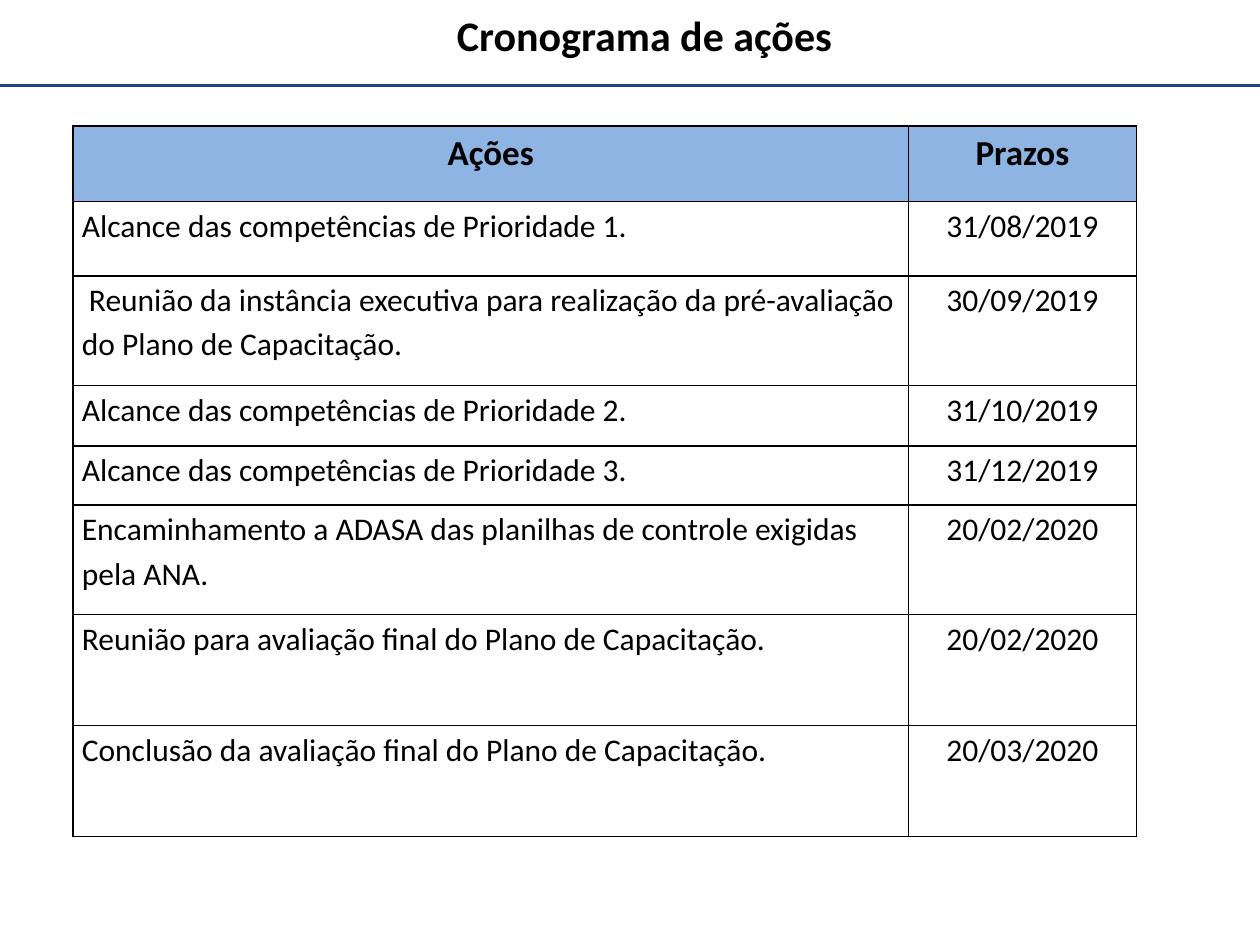
from dataclasses import dataclass

from lxml import etree
from pptx import Presentation
from pptx.dml.color import RGBColor
from pptx.enum.shapes import MSO_CONNECTOR
from pptx.enum.text import MSO_ANCHOR, PP_ALIGN
from pptx.oxml.ns import qn
from pptx.util import Inches, Pt

LEFT, CENTER = PP_ALIGN.LEFT, PP_ALIGN.CENTER
MIDDLE = MSO_ANCHOR.MIDDLE
STRAIGHT = MSO_CONNECTOR.STRAIGHT

# Content
TITLE = "Cronograma de ações"
HEADER = ("Ações", "Prazos")
ACTIONS = [
    ("Alcance das competências de Prioridade 1.", "31/08/2019"),
    (" Reunião da instância executiva para realização da pré-avaliação "
     "do Plano de Capacitação.", "30/09/2019"),
    ("Alcance das competências de Prioridade 2.", "31/10/2019"),
    ("Alcance das competências de Prioridade 3.", "31/12/2019"),
    ("Encaminhamento a ADASA das planilhas de controle exigidas pela ANA.",
     "20/02/2020"),
    ("Reunião para avaliação final do Plano de Capacitação.", "20/02/2020"),
    ("Conclusão da avaliação final do Plano de Capacitação.", "20/03/2020"),
]


@dataclass(frozen=True)
class Theme:
    font: str = "Calibri"
    ink: str = "000000"
    rule: str = "1C477D"
    header: str = "8EB4E3"
    title_size: int = 24
    header_size: int = 20
    body_size: int = 18


THEME = Theme()

# Layout in inches
PAGE_WIDTH, PAGE_HEIGHT = 10, 7.5
RULE_TOP = 0.68
TITLE_BOX = (2.32, 0.02, 5.59, 0.51)
TABLE_LEFT, TABLE_TOP = 0.58, 1
COLUMNS = (6.63, 1.81)
ROWS = (0.6, 0.59, 0.87, 0.48, 0.47, 0.87, 0.88, 0.88)
CELL_MARGIN = 0.07


def write(frame, text, size, bold=False, align=CENTER, spacing=None):
    frame.word_wrap = True
    para = frame.paragraphs[0]
    para.alignment = align
    if spacing:
        para.line_spacing = spacing
    span = para.add_run()
    span.text = text
    span.font.name = THEME.font
    span.font.size = Pt(size)
    span.font.bold = bold
    span.font.color.rgb = RGBColor.from_string(THEME.ink)


def add_borders(cell):
    properties = cell._tc.get_or_add_tcPr()
    for side in ("a:lnL", "a:lnR", "a:lnT", "a:lnB"):
        line = etree.SubElement(properties, qn(side), w=str(Pt(1)))
        fill = etree.SubElement(line, qn("a:solidFill"))
        etree.SubElement(fill, qn("a:srgbClr"), val=THEME.ink)


def add_title(page):
    title = page.shapes.title
    title.left, title.top, title.width, title.height = map(Inches, TITLE_BOX)
    title.text_frame.vertical_anchor = MIDDLE
    write(title.text_frame, TITLE, THEME.title_size, bold=True)


def add_rule(page):
    top = Inches(RULE_TOP)
    rule = page.shapes.add_connector(STRAIGHT, 0, top, Inches(PAGE_WIDTH), top)
    rule.line.color.rgb = RGBColor.from_string(THEME.rule)
    rule.line.width = Pt(2)
    etree.SubElement(rule._element.spPr, qn("a:effectLst"))


def add_schedule(page):
    table = page.shapes.add_table(
        len(ROWS), len(COLUMNS), Inches(TABLE_LEFT), Inches(TABLE_TOP),
        Inches(sum(COLUMNS)), Inches(sum(ROWS))).table
    table.horz_banding = False
    for column, width in zip(table.columns, COLUMNS):
        column.width = Inches(width)

    for r, (height, texts) in enumerate(zip(ROWS, [HEADER, *ACTIONS])):
        table.rows[r].height = Inches(height)
        is_header = r == 0
        for c, text in enumerate(texts):
            cell = table.cell(r, c)
            cell.margin_left = cell.margin_right = Inches(CELL_MARGIN)
            cell.margin_top = cell.margin_bottom = 0
            add_borders(cell)
            if is_header:
                cell.fill.solid()
                cell.fill.fore_color.rgb = RGBColor.from_string(THEME.header)
            else:
                cell.fill.background()
            write(cell.text_frame, text,
                  THEME.header_size if is_header else THEME.body_size,
                  bold=is_header, spacing=1.15,
                  align=CENTER if is_header or c == 1 else LEFT)


def main():
    deck = Presentation()
    deck.slide_width, deck.slide_height = Inches(PAGE_WIDTH), Inches(PAGE_HEIGHT)
    page = deck.slides.add_slide(deck.slide_layouts[5])  # title only
    add_rule(page)
    add_title(page)
    add_schedule(page)
    deck.save("out.pptx")


if __name__ == "__main__":
    main()
